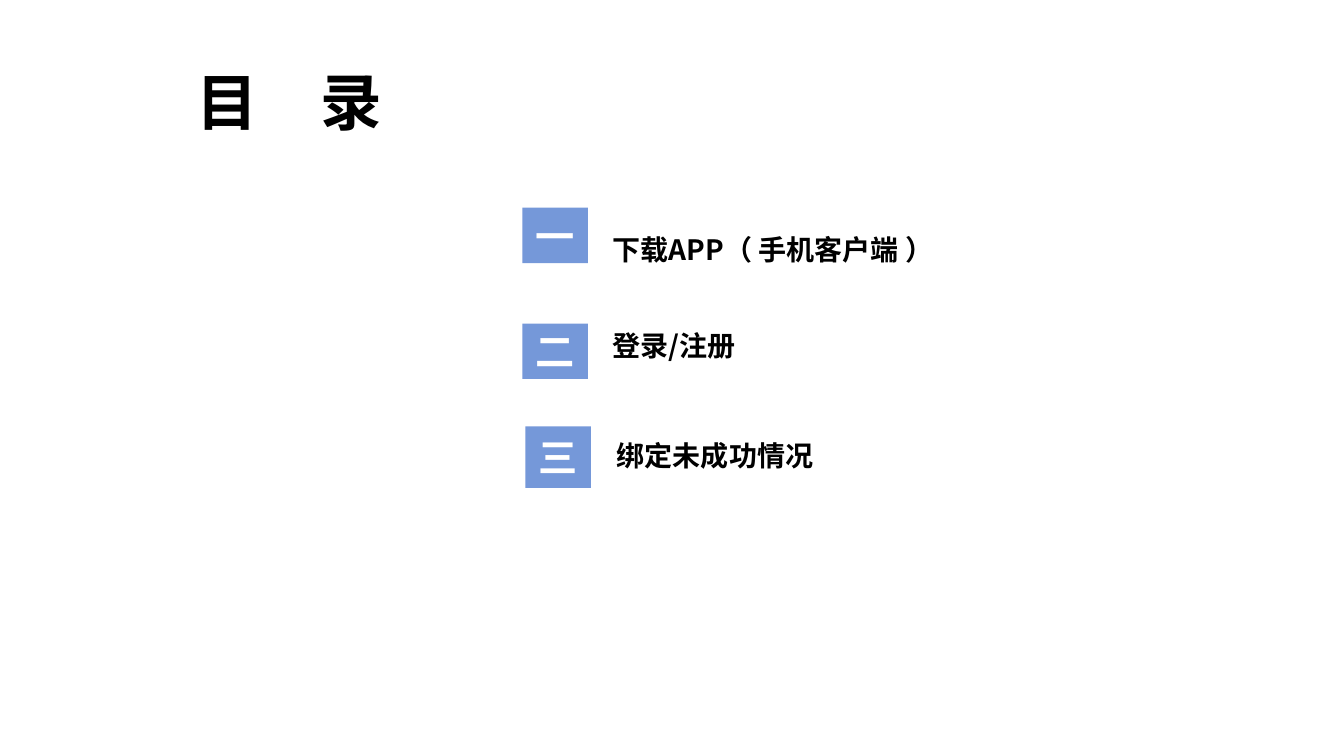
from dataclasses import dataclass

from lxml.etree import SubElement
from pptx import Presentation
from pptx.dml.color import RGBColor
from pptx.enum.shapes import MSO_SHAPE
from pptx.enum.text import MSO_ANCHOR, MSO_AUTO_SIZE, PP_ALIGN
from pptx.oxml.ns import qn
from pptx.util import Inches, Pt


@dataclass(frozen=True)
class Theme:
    ink: RGBColor = RGBColor(0, 0, 0)
    paper: RGBColor = RGBColor(255, 255, 255)
    badge: RGBColor = RGBColor(0x75, 0x98, 0xD9)
    heading_font: str = "Noto Sans CJK SC"
    badge_font: str = "Calibri"
    title_size: int = 44
    badge_size: int = 28
    entry_size: int = 20


THEME = Theme()

# Numeral, wording, badge box, left and top of the wording, exact line spacing
ENTRIES = [
    ("一", "下载APP（ 手机客户端 ）", (5.18, 2.06, 0.65, 0.55), (0.8, 0.04), Pt(35.6)),
    ("二", "登录/注册", (5.18, 3.21, 0.65, 0.55), (0.8, 0), None),
    ("三", "绑定未成功情况", (5.21, 4.23, 0.65, 0.61), (0.81, 0.07), None),
]


def write_text(shape, text, *, size, font=THEME.heading_font, color=THEME.ink,
               align=PP_ALIGN.LEFT, anchor=MSO_ANCHOR.TOP, spacing=None, margin=None):
    frame = shape.text_frame
    frame.word_wrap = True
    frame.auto_size = MSO_AUTO_SIZE.NONE
    frame.vertical_anchor = anchor
    if margin is not None:
        frame.margin_left = frame.margin_right = margin
        frame.margin_top = frame.margin_bottom = margin
    paragraph = frame.paragraphs[0]
    paragraph.alignment = align
    if spacing is not None:
        paragraph.line_spacing = spacing
    run = paragraph.add_run()
    run.text = text
    run.font.size = Pt(size)
    run.font.bold = True
    run.font.color.rgb = color
    run.font.name = font
    # East Asian characters take their typeface from a:ea
    SubElement(run.font._element, qn("a:ea")).set("typeface", font)


def place_title(slide, left, top, width, height):
    title = slide.shapes.title
    title.left, title.top = Inches(left), Inches(top)
    title.width, title.height = Inches(width), Inches(height)
    write_text(title, "目　录", size=THEME.title_size, align=PP_ALIGN.CENTER,
               anchor=MSO_ANCHOR.MIDDLE, spacing=0.9)


def add_badge(slide, numeral, box):
    badge = slide.shapes.add_shape(MSO_SHAPE.RECTANGLE, *map(Inches, box))
    badge.shadow.inherit = False
    badge.fill.solid()
    badge.fill.fore_color.rgb = THEME.badge
    badge.line.fill.background()
    write_text(badge, numeral, size=THEME.badge_size, font=THEME.badge_font,
               color=THEME.paper, align=PP_ALIGN.CENTER,
               anchor=MSO_ANCHOR.MIDDLE, margin=0)


def add_entry(slide, numeral, wording, box, offset, spacing):
    """Place a numbered badge with its wording offset from the badge's corner."""
    add_badge(slide, numeral, box)
    label = slide.shapes.add_textbox(
        Inches(box[0] + offset[0]), Inches(box[1] + offset[1]),
        Inches(5.9), Inches(0.46))
    write_text(label, wording, size=THEME.entry_size, spacing=spacing)


def build_contents_slide(presentation):
    slide = presentation.slides.add_slide(presentation.slide_layouts[5])
    slide.background.fill.solid()
    slide.background.fill.fore_color.rgb = THEME.paper
    place_title(slide, 0.76, 0.66, 4.22, 0.77)
    for entry in ENTRIES:
        add_entry(slide, *entry)


def main():
    presentation = Presentation()
    presentation.slide_width = Inches(13.33)
    presentation.slide_height = Inches(7.5)
    build_contents_slide(presentation)
    presentation.save("out.pptx")


if __name__ == "__main__":
    main()
